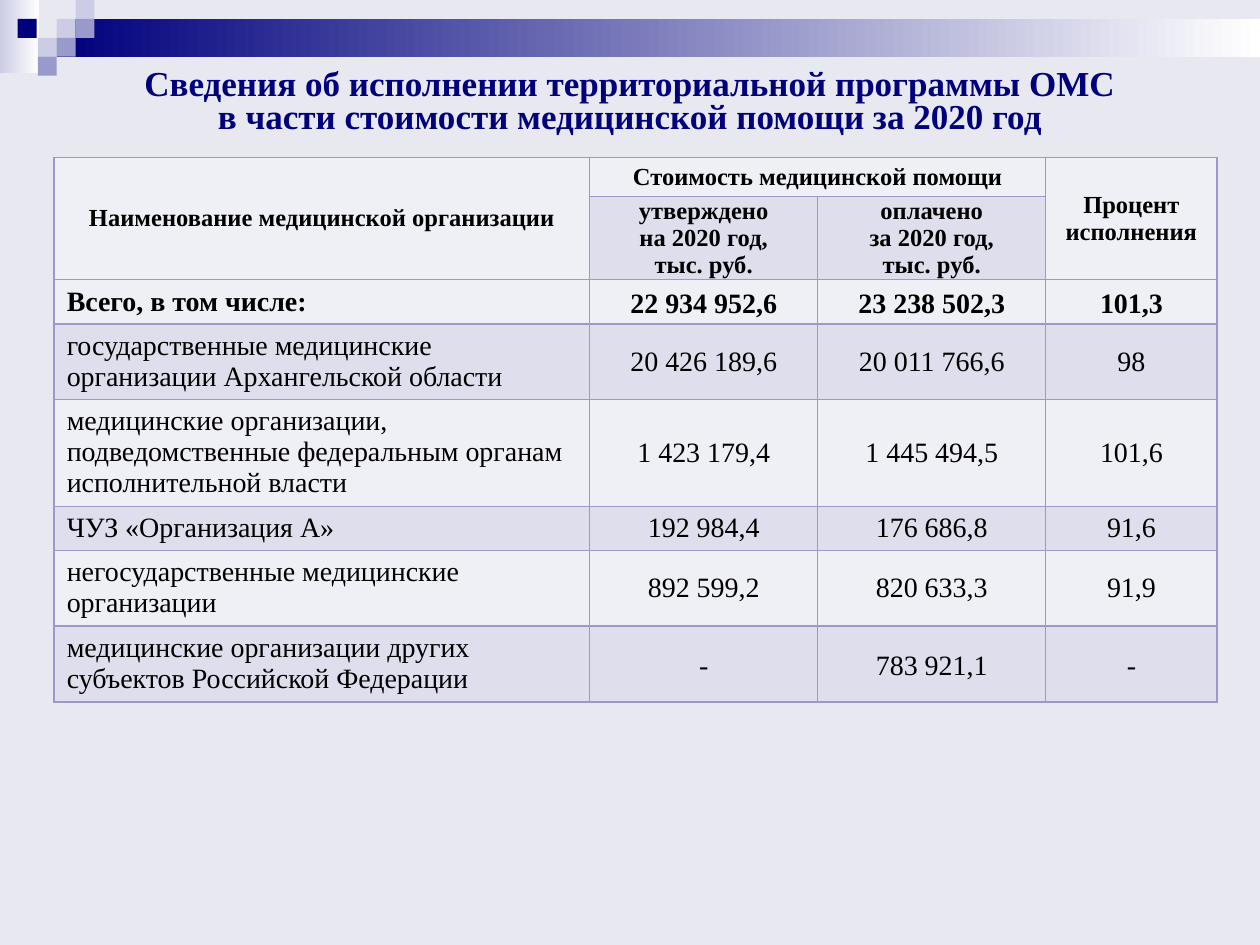
from copy import deepcopy

from lxml import etree
from pptx import Presentation
from pptx.dml.color import RGBColor
from pptx.enum.shapes import MSO_SHAPE
from pptx.enum.text import MSO_ANCHOR, PP_ALIGN
from pptx.oxml.ns import qn
from pptx.util import Inches, Pt

RECT = MSO_SHAPE.RECTANGLE
TOP, MIDDLE = MSO_ANCHOR.TOP, MSO_ANCHOR.MIDDLE
LEFT, CENTER = PP_ALIGN.LEFT, PP_ALIGN.CENTER

NAVY = RGBColor(0x00, 0x00, 0x7D)
VIOLET = RGBColor(0x99, 0x99, 0xCC)
LILAC = RGBColor(0xCC, 0xCC, 0xE6)
WHITE = RGBColor(0xFF, 0xFF, 0xFF)
BLACK = RGBColor(0x00, 0x00, 0x00)
PAPER = RGBColor(0xE8, 0xE8, 0xF1)
BANDS = RGBColor(0xEF, 0xEF, 0xF6), RGBColor(0xDE, 0xDE, 0xEC)
FACE = "Times New Roman"

TITLE = ("Сведения об исполнении территориальной программы ОМС\n"
         "в части стоимости медицинской помощи за 2020 год")
HEAD = [
    ["Наименование медицинской организации", "Стоимость медицинской помощи",
     None, "Процент исполнения"],
    [None, "утверждено\nна 2020 год,\nтыс. руб.",
     "оплачено\nза 2020 год,\nтыс. руб.", None],
]
BODY = [
    ["Всего, в том числе:", "22 934 952,6", "23 238 502,3", "101,3"],
    ["государственные медицинские организации Архангельской области",
     "20 426 189,6", "20 011 766,6", "98"],
    ["медицинские организации, подведомственные федеральным органам "
     "исполнительной власти", "1 423 179,4", "1 445 494,5", "101,6"],
    ["ЧУЗ «Организация А»", "192 984,4", "176 686,8", "91,6"],
    ["негосударственные медицинские организации",
     "892 599,2", "820 633,3", "91,9"],
    ["медицинские организации других субъектов Российской Федерации",
     "-", "783 921,1", "-"],
]
MERGES = [((0, 0), (1, 0)), ((0, 1), (0, 2)), ((0, 3), (1, 3))]
COLS = [4.25, 1.81, 1.81, 1.36]
ROWS = [0.31, 0.66, 0.35, 0.6, 0.85, 0.35, 0.6, 0.6]
LOOSE = {2, 7}  # rows whose figures have wider line spacing

FADES = [((0, 0, 0.31, 0.58), LILAC), ((0.45, 0.15, 9.55, 0.3), NAVY)]
SIDE = 0.15
TILES = [(0.45, 0.15, LILAC), (0.6, 0, LILAC), (0.6, 0.15, VIOLET),
         (0.3, 0.3, LILAC), (0.14, 0.15, NAVY), (0.45, 0.3, VIOLET),
         (0.3, 0.45, VIOLET)]


def add_rect(slide, box):
    rect = slide.shapes.add_shape(RECT, *map(Inches, box))
    rect.shadow.inherit = False
    rect.line.fill.background()
    return rect


def write(frame, text, align, spacing, size, color, bold):
    para = frame.paragraphs[0]
    para.text = text
    para.alignment = align
    if spacing:
        para.line_spacing = spacing
    look = {"name": FACE, "size": Pt(size), "bold": bold}
    for run in para.runs:
        for key, value in look.items():
            setattr(run.font, key, value)
        run.font.color.rgb = color
    # Line breaks take the run format, so they do not change line height
    for gap in para._p.iter(qn("a:br")):
        gap.append(deepcopy(para.runs[0]._r.rPr))


def add_border(cell):
    props = cell._tc.get_or_add_tcPr()
    for spot, edge in enumerate("LRTB"):
        line = etree.Element(qn("a:ln" + edge), w=str(Pt(1)))
        fill = etree.SubElement(line, qn("a:solidFill"))
        etree.SubElement(fill, qn("a:srgbClr"), val=str(VIOLET))
        props.insert(spot, line)


def add_grid(slide):
    data = HEAD + BODY
    box = map(Inches, (0.43, 1.25, sum(COLS), sum(ROWS)))
    table = slide.shapes.add_table(len(ROWS), len(COLS), *box).table
    table.first_row = table.horz_banding = False
    for col, width in zip(table.columns, COLS):
        col.width = Inches(width)
    for row, height in zip(table.rows, ROWS):
        row.height = Inches(height)
    for start, end in MERGES:
        table.cell(*start).merge(table.cell(*end))

    for r, row in enumerate(data):
        head = r < len(HEAD)
        for c, text in enumerate(row):
            cell = table.cell(r, c)
            cell.fill.solid()
            cell.fill.fore_color.rgb = BANDS[r % 2]
            add_border(cell)
            if text is None:
                continue
            label = c == 0 and not head
            cell.vertical_anchor = TOP if label and r > 2 else MIDDLE
            tight = (head and c < 3) or (r in LOOSE and not label)
            if tight:
                cell.margin_left = cell.margin_right = Inches(0.07)
                cell.margin_top = cell.margin_bottom = 0
            write(cell.text_frame, text, LEFT if label else CENTER,
                  1.15 if r in LOOSE and not label else None,
                  14 if head else 16, BLACK, r <= 2)


def main():
    deck = Presentation()
    deck.slide_width, deck.slide_height = Inches(10), Inches(7.5)
    slide = deck.slides.add_slide(deck.slide_layouts[5])
    slide.background.fill.solid()
    slide.background.fill.fore_color.rgb = PAPER

    for box, color in FADES:
        fill = add_rect(slide, box).fill
        fill.gradient()
        fill.gradient_angle = 0
        for stop, tone in zip(fill.gradient_stops, (color, WHITE)):
            stop.color.rgb = tone
    for x, y, color in TILES:
        fill = add_rect(slide, (x, y, SIDE, SIDE)).fill
        fill.solid()
        fill.fore_color.rgb = color

    title = slide.shapes.title
    title.left, title.top = Inches(0.5), Inches(0.5)
    title.width, title.height = Inches(9), Inches(0.89)
    title.text_frame.vertical_anchor = TOP
    write(title.text_frame, TITLE, CENTER, 0.8, 20, NAVY, True)

    add_grid(slide)
    deck.save("out.pptx")


if __name__ == "__main__":
    main()
